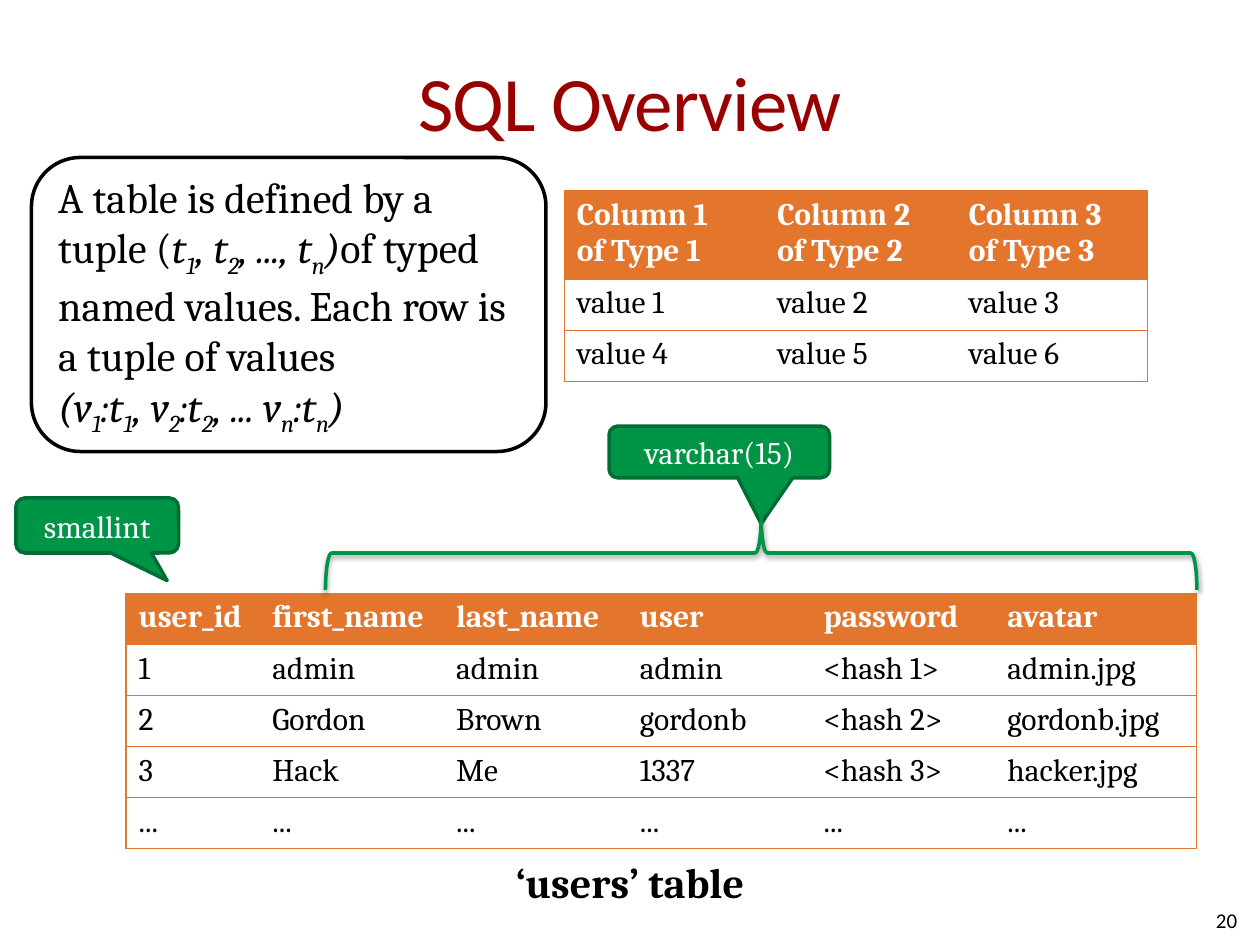
import lxml.etree
import pptx
import pptx.dml.color
import pptx.enum.shapes
import pptx.enum.text
import pptx.oxml
import pptx.oxml.ns
import pptx.util

Pt = pptx.util.Pt
Align = pptx.enum.text.PP_ALIGN
Anchor = pptx.enum.text.MSO_ANCHOR
Shape = pptx.enum.shapes.MSO_SHAPE
qn = pptx.oxml.ns.qn

COLORS = {
    "title": "990000",
    "text": "000000",
    "white": "FFFFFF",
    "orange": "E3752D",
    "green": "009446",
    "dark_green": "006D34",
}

TYPE_ROWS = [
    ["Column 1 \vof Type 1", "Column 2 \vof Type 2", "Column 3 \vof Type 3"],
    ["value 1", "value 2", "value 3"],
    ["value 4", "value 5", "value 6"],
]
USER_ROWS = [
    ["user_id", "first_name", "last_name", "user", "password", "avatar"],
    ["1", "admin", "admin", "admin", "<hash 1>", "admin.jpg"],
    ["2", "Gordon", "Brown", "gordonb", "<hash 2>", "gordonb.jpg"],
    ["3", "Hack", "Me", "1337", "<hash 3>", "hacker.jpg"],
    ["..."] * 6,
]
ROW_HEIGHT = 29.2


def rgb(name):
    return pptx.dml.color.RGBColor.from_string(COLORS[name])


def style(para, size, color="text", font="Cambria", bold=False, align=Align.LEFT):
    para.alignment = align
    para.font.name = font
    para.font.size = Pt(size)
    para.font.bold = bold
    para.font.color.rgb = rgb(color)


def add_title(page, text):
    title = page.shapes.title
    title.left, title.top, title.width, title.height = Pt(36), Pt(12.5), Pt(648), Pt(90)
    frame = title.text_frame
    frame.margin_left = frame.margin_right = 0
    frame.vertical_anchor = Anchor.MIDDLE
    frame.text = text
    para = frame.paragraphs[0]
    style(para, 44, "title", "Calibri", align=Align.CENTER)
    para.runs[0].font._element.set("spc", "-50")


def add_label(page, text, left, top, width, height, **look):
    box = page.shapes.add_textbox(Pt(left), Pt(top), Pt(width), Pt(height))
    frame = box.text_frame
    frame.word_wrap = True
    frame.vertical_anchor = Anchor.MIDDLE
    frame.text = text
    style(frame.paragraphs[0], **look)


def add_outlined(page, kind, left, top, width, height, line, fill=None):
    shape = page.shapes.add_shape(kind, Pt(left), Pt(top), Pt(width), Pt(height))
    shape.shadow.inherit = False
    shape.line.color.rgb = rgb(line)
    shape.line.width = Pt(2)
    if fill:
        shape.fill.solid()
        shape.fill.fore_color.rgb = rgb(fill)
    else:
        shape.fill.background()
    return shape


def add_callout(page, text, left, top, width, height, tip):
    shape = add_outlined(page, Shape.ROUNDED_RECTANGULAR_CALLOUT,
                         left, top, width, height, "dark_green", "green")
    shape.adjustments[0], shape.adjustments[1] = tip
    shape.text_frame.text = text
    shape.text_frame.vertical_anchor = Anchor.MIDDLE
    style(shape.text_frame.paragraphs[0], 18, "white", align=Align.CENTER)


def add_tuple(para, text):
    """Write an italic tuple; the character after each underscore is a subscript."""
    first, *rest = text.split("_")
    pieces = [(first, False)]
    for part in rest:
        pieces += [(part[0], True), (part[1:], False)]
    for piece, subscript in pieces:
        span = para.add_run()
        span.text = piece
        span.font.italic = True
        if subscript:
            span.font._element.set("baseline", "-25000")


def add_definition(page):
    shape = add_outlined(page, Shape.ROUNDED_RECTANGLE, 18, 90, 294, 168, "text", "white")
    shape.text_frame.vertical_anchor = Anchor.MIDDLE
    para = shape.text_frame.paragraphs[0]
    style(para, 24)
    para.add_run().text = "A table is defined by a tuple ("
    add_tuple(para, "t_1, t_2, ..., t_n)")
    para.add_run().text = "of typed named values. Each row is a tuple of values "
    para.add_line_break()
    add_tuple(para, "(v_1:t_1, v_2:t_2, ... v_n:t_n)")


def set_borders(cell, visible):
    properties = cell._tc.get_or_add_tcPr()
    for index, side in enumerate("LRTB"):
        line = lxml.etree.Element(qn(f"a:ln{side}"), w=str(Pt(0.75)))
        if side in visible:
            fill = lxml.etree.SubElement(line, qn("a:solidFill"))
            lxml.etree.SubElement(fill, qn("a:srgbClr"), val=COLORS["orange"])
        else:
            lxml.etree.SubElement(line, qn("a:noFill"))
        properties.insert(index, line)


def add_grid(page, rows, left, top, widths, header_height=ROW_HEIGHT):
    heights = [header_height] + [ROW_HEIGHT] * (len(rows) - 1)
    table = page.shapes.add_table(len(rows), len(widths), Pt(left), Pt(top),
                                  Pt(sum(widths)), Pt(sum(heights))).table
    table.horz_banding = False
    for column, width in zip(table.columns, widths):
        column.width = Pt(width)
    for row, height in zip(table.rows, heights):
        row.height = Pt(height)
    for i, texts in enumerate(rows):
        for j, text in enumerate(texts):
            cell = table.cell(i, j)
            header = i == 0
            cell.text = text
            style(cell.text_frame.paragraphs[0], 18,
                  "white" if header else "text", bold=header)
            cell.fill.solid()
            cell.fill.fore_color.rgb = rgb("orange" if header else "white")
            sides = "TB"
            if j == 0:
                sides += "L"
            if j == len(widths) - 1:
                sides += "R"
            set_borders(cell, sides)


def add_brace(page):
    # Turned a quarter so that its point faces up
    brace = add_outlined(page, Shape.RIGHT_BRACE, 414, 67, 42, 498, "green")
    brace.rotation = 270
    effects = brace._element.spPr.find(qn("a:effectLst"))
    shadow = lxml.etree.SubElement(effects, qn("a:outerShdw"), blurRad=str(Pt(3.1)),
                                   dist=str(Pt(1.6)), dir="5400000", rotWithShape="0")
    color = lxml.etree.SubElement(shadow, qn("a:srgbClr"), val=COLORS["text"])
    lxml.etree.SubElement(color, qn("a:alpha"), val="38000")


def main():
    deck = pptx.Presentation()
    deck.slide_width, deck.slide_height = Pt(720), Pt(540)
    page = deck.slides.add_slide(deck.slide_layouts[5])

    # Title and page number
    add_title(page, "SQL Overview")
    add_label(page, "20", 546, 511, 168, 29, size=12, font="Calibri", align=Align.RIGHT)

    # Tables
    add_grid(page, TYPE_ROWS, 322.5, 109, [114.5, 109.5, 109.5], 48.5)
    add_grid(page, USER_ROWS, 72, 339, [76.5, 105, 105, 105, 105, 115.5])
    add_label(page, "‘users’ table", 0, 486, 720, 36, size=24, bold=True,
              align=Align.CENTER)

    # Definition and column types
    add_definition(page)
    add_callout(page, "smallint", 9, 284.5, 93, 31.5, (0.43, 1))
    add_callout(page, "varchar(15)", 348, 243.5, 126, 29.5, (0.19, 1.39))
    add_brace(page)

    deck.save("out.pptx")


if __name__ == "__main__":
    main()
